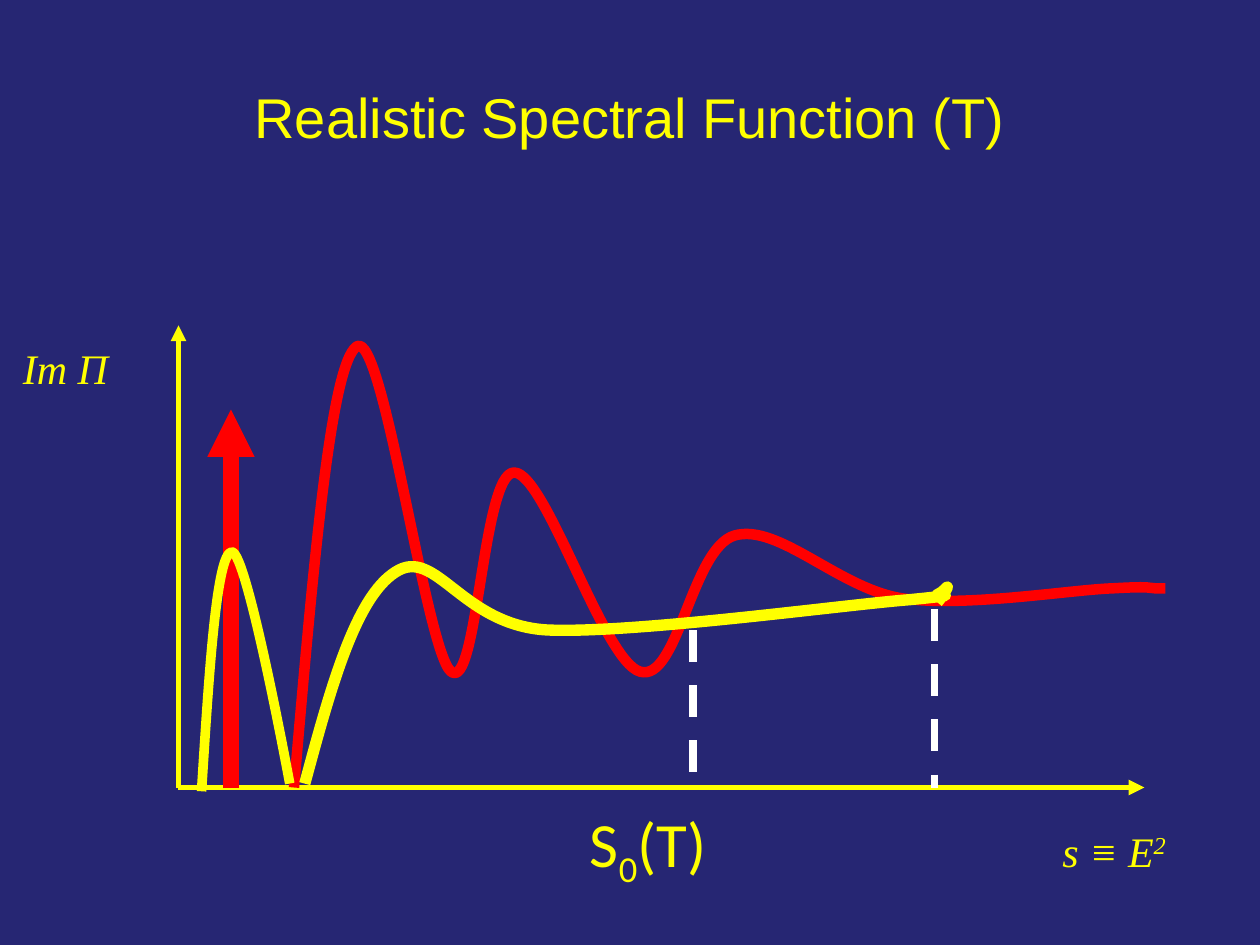
import lxml.etree
import pptx
import pptx.dml.color
import pptx.enum.dml
import pptx.enum.shapes
import pptx.enum.text
import pptx.oxml
import pptx.oxml.ns
import pptx.util

Pt = pptx.util.Pt
qn = pptx.oxml.ns.qn
COLORS = {"navy": "262673", "yellow": "FFFF00", "red": "FF0000", "white": "FFFFFF"}

VACUUM = [
    (168, 450),
    (178.6, 329.8), (188.6, 208.8), (203.8, 198),
    (218.9, 187.2), (243.4, 372.2), (257.8, 383.8),
    (272.9, 396), (275.8, 270), (293.8, 270),
    (311.8, 270), (344.9, 378), (365.8, 383.8),
    (387.4, 390.2), (395.3, 313.2), (419.8, 306),
    (445, 298.8), (480.2, 337), (516.2, 342),
    (552.2, 347), (612, 337), (635.8, 336.2),
    (660.2, 334.8), (655.2, 336.2), (660.2, 336.2),
    (665.3, 336.2), (665.3, 336.2), (666, 336.2),
]
THERMAL = [
    (174.2, 447.8),
    (188.6, 394.6), (203, 341.3), (226.1, 326.9),
    (249.1, 311.8), (263.5, 357.1), (312.5, 360),
    (361.4, 362.2), (482.4, 345.6), (519.8, 342.7),
    (556.6, 339.1), (532.1, 340.6), (535.7, 339.8),
    (539.3, 338.4), (541.4, 334.8), (541.4, 335.5),
    (541.4, 336.2), (537.1, 342.7), (535.7, 344.2),
]
RESONANCE = [
    (115.2, 452.2),
    (119.5, 383.8), (123.8, 316.1), (132.5, 315.4),
    (141.1, 314.6), (165.6, 447.8), (165.6, 447.8),
]


class SlideBuilder:
    """Draws styled elements on the current slide."""

    def __init__(self, page):
        self.page = page
        self.page.background.fill.solid()
        self.page.background.fill.fore_color.rgb = self.color("navy")

    def color(self, name):
        return pptx.dml.color.RGBColor.from_string(COLORS[name])

    def stroke(self, shape, color, width):
        shape.line.color.rgb = self.color(color)
        shape.line.width = Pt(width)

    def text(self, box, spans, font, size, italic=False, centered=False):
        frame = self.page.shapes.add_textbox(*map(Pt, box)).text_frame
        frame.word_wrap = True
        para = frame.paragraphs[0]
        if centered:
            frame.vertical_anchor = pptx.enum.text.MSO_ANCHOR.MIDDLE
            para.alignment = pptx.enum.text.PP_ALIGN.CENTER
        for words, baseline in spans:
            span = para.add_run()
            span.text = words
            span.font.name = font
            span.font.size = Pt(size)
            span.font.italic = italic
            span.font.color.rgb = self.color("yellow")
            if baseline:
                span.font._element.set("baseline", str(baseline * 1000))

    def line(self, start, end, color, width, arrow=False, dashed=False):
        straight = pptx.enum.shapes.MSO_CONNECTOR.STRAIGHT
        line = self.page.shapes.add_connector(straight, *map(Pt, start + end))
        self.stroke(line, color, width)
        if dashed:
            line.line.dash_style = pptx.enum.dml.MSO_LINE.DASH
        if arrow:
            outline = line.line._get_or_add_ln()
            lxml.etree.SubElement(outline, qn("a:tailEnd"), type="triangle")
        lxml.etree.SubElement(line._element.spPr, qn("a:effectLst"))

    def curve(self, points, color, width):
        start, *rest = [(Pt(x), Pt(y)) for x, y in points]
        builder = self.page.shapes.build_freeform(*start)
        builder.add_line_segments(rest, close=False)
        shape = builder.convert_to_shape()
        shape.shadow.inherit = False
        shape.fill.background()
        self.stroke(shape, color, width)
        outline = next(shape._element.iter(qn("a:pathLst")))[0]
        segments = outline.findall(qn("a:lnTo"))
        for first in range(0, len(segments), 3):
            bezier = lxml.etree.SubElement(outline, qn("a:cubicBezTo"))
            for segment in segments[first:first + 3]:
                bezier.append(segment[0])
                outline.remove(segment)


def main():
    deck = pptx.Presentation()
    deck.slide_width, deck.slide_height = Pt(720), Pt(540)
    slide = SlideBuilder(deck.slides.add_slide(deck.slide_layouts[6]))
    origin = (102, 450)

    slide.text((36, 21.6, 648, 90), [("Realistic Spectral Function (T)", 0)],
               "Arial", 32, centered=True)
    slide.line(origin, (102, 186), "yellow", 3, arrow=True)
    slide.line(origin, (654, 450), "yellow", 3, arrow=True)
    slide.line((132, 450), (132, 234), "red", 9, arrow=True)
    slide.curve(VACUUM, "red", 6)
    slide.text((6, 192, 78, 36), [("Im Π", 0)], "Times New Roman", 24, italic=True)
    slide.text((600, 468, 96, 36), [("s ≡ E", 0), ("2", 30)],
               "Times New Roman", 24, italic=True)
    slide.line((534, 348), (534, 450), "white", 4.5, dashed=True)
    slide.text((330, 456, 84, 51), [("S", 0), ("0", -25), ("(T)", 0)], "Calibri", 36)
    slide.curve(THERMAL, "yellow", 6.5)
    slide.line((396, 360), (396, 448), "white", 4.5, dashed=True)
    slide.curve(RESONANCE, "yellow", 5.5)
    deck.save("out.pptx")


if __name__ == "__main__":
    main()
